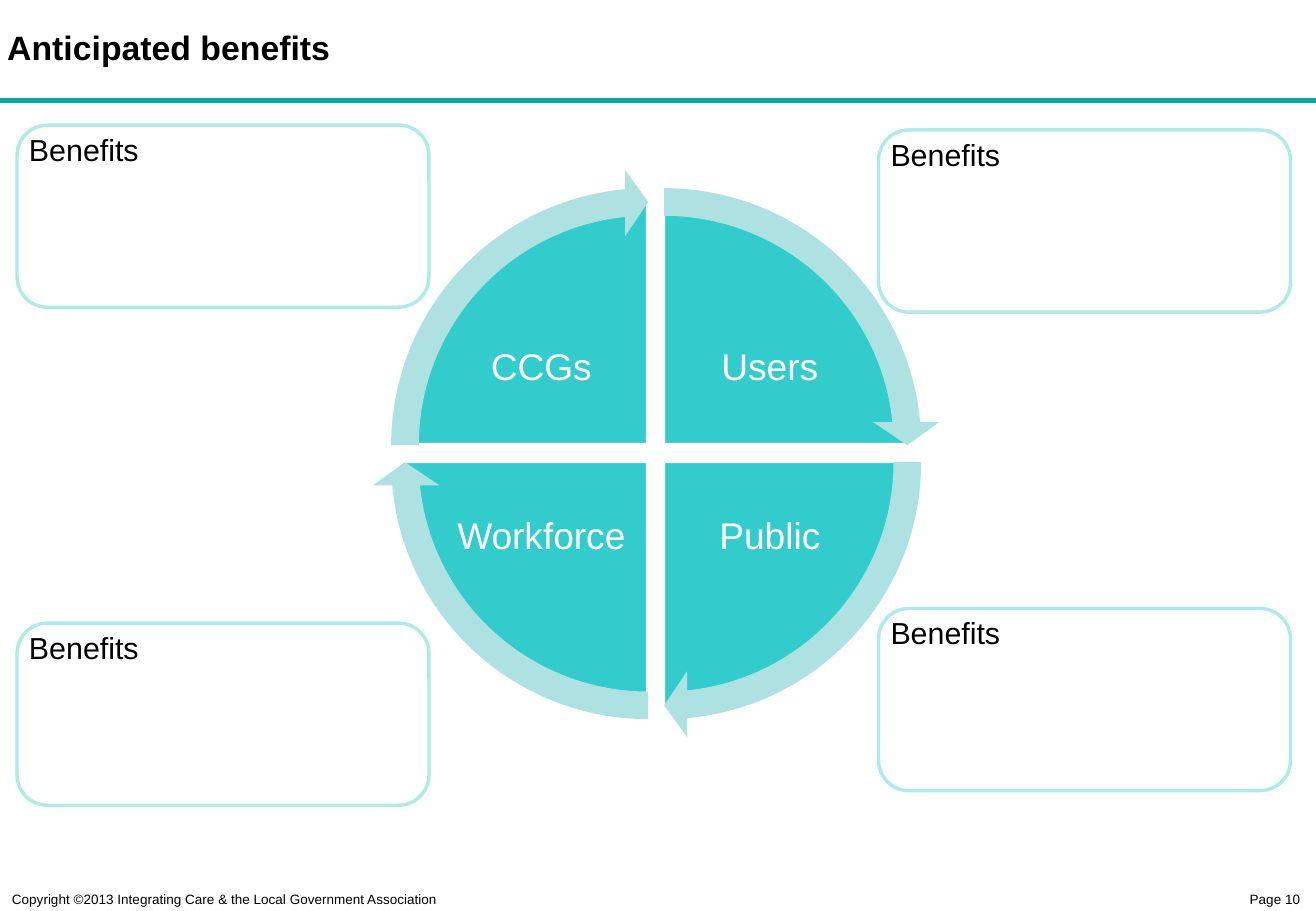
from pptx import Presentation
from pptx.dml.color import RGBColor
from pptx.enum.shapes import MSO_CONNECTOR, MSO_SHAPE as SHAPE
from pptx.enum.text import MSO_ANCHOR as ANCHOR, PP_ALIGN as ALIGN
from pptx.util import Emu, Pt
from lxml.etree import SubElement
from pptx.oxml.ns import qn

PX = 9144  # 100 px to the inch
COLORS = {
    "rule": "00A9AA", "wedge": "33CCCC", "arrow": "AEE2E2",
    "frame": "ADEBEB", "black": "000000", "white": "FFFFFF",
}


def add_text(text, box, size, color="black", align=ALIGN.LEFT,
             anchor=ANCHOR.TOP, pad=None, space=None, bold=False):
    frame = slide.shapes.add_textbox(*[Emu(n * PX) for n in box]).text_frame
    frame.word_wrap = True
    frame.vertical_anchor = anchor
    if pad is not None:
        frame.margin_left = frame.margin_right = Emu(pad * PX)
        frame.margin_top = frame.margin_bottom = Emu(pad * PX)
    para = frame.paragraphs[0]
    para.text = text
    para.alignment = align
    para.line_spacing = space
    font = para.runs[0].font
    font.name, font.size, font.bold = "Arial", Pt(size), bold
    font.color.rgb = RGBColor.from_string(COLORS[color])


def add_form(kind, box, fill=None, line=None, adjust=()):
    form = slide.shapes.add_shape(kind, *[Emu(n * PX) for n in box])
    form.shadow.inherit = False
    for i, value in enumerate(adjust):
        form.adjustments[i] = value
    if fill:
        form.fill.solid()
        form.fill.fore_color.rgb = RGBColor.from_string(COLORS[fill])
    else:
        form.fill.background()
    if line:
        form.line.color.rgb = RGBColor.from_string(COLORS[line])
        form.line.width = Pt(2)
    else:
        form.line.fill.background()


deck = Presentation()
deck.slide_width, deck.slide_height = Emu(1083 * PX), Emu(750 * PX)
slide = deck.slides.add_slide(deck.slide_layouts[6])

# Header rule and title
rule = slide.shapes.add_connector(
    MSO_CONNECTOR.STRAIGHT, 0, Emu(83 * PX), Emu(1083 * PX), Emu(83 * PX))
rule.line.color.rgb = RGBColor.from_string(COLORS["rule"])
rule.line.width = Pt(3)
SubElement(rule._element.spPr, qn("a:effectLst"))
add_text("Anticipated benefits", (-2, 1, 756, 76), 20,
         anchor=ANCHOR.MIDDLE, pad=8, bold=True)

# Footer
add_text("Copyright ©2013 Integrating Care & the Local Government Association",
         (0, 722, 374, 28), 8, space=1.5)
add_text("Page 10 ", (896, 722, 187, 28), 8, align=ALIGN.RIGHT, space=1.5)

# Wheel: label, column, row and start angle, clockwise from the top right
QUARTER = 54  # 90 degrees in adjustment units
parts = [("Users", 1, 0, 162), ("Public", 1, 1, 0),
         ("Workforce", 0, 1, 54), ("CCGs", 0, 0, 108)]
for label, col, row, start in parts:
    add_form(SHAPE.PIE, (331 + 13 * col, 164 + 14 * row, 404, 404),
             "wedge", "white", (start, (start + QUARTER) % 216))
    add_text(label, (371 + 188 * col, 248 + 139 * row, 149, 111), 22, "white",
             ALIGN.CENTER, ANCHOR.MIDDLE, pad=3, space=0.9)

# Arrows around the wheel
for label, col, row, start in parts:
    add_form(SHAPE.CIRCULAR_ARROW, (306 + 13 * col, 139 + 14 * row, 455, 455),
             "arrow", adjust=(0.05, 3.28, start + 50.72, start, 0.06))

# Benefit boxes
for left, top in [(723, 107), (723, 501), (14, 513), (14, 103)]:
    add_text("Benefits", (left, top, 339, 71), 18)
    add_form(SHAPE.ROUNDED_RECTANGLE, (left, top, 339, 150), line="frame")

deck.save("out.pptx")
